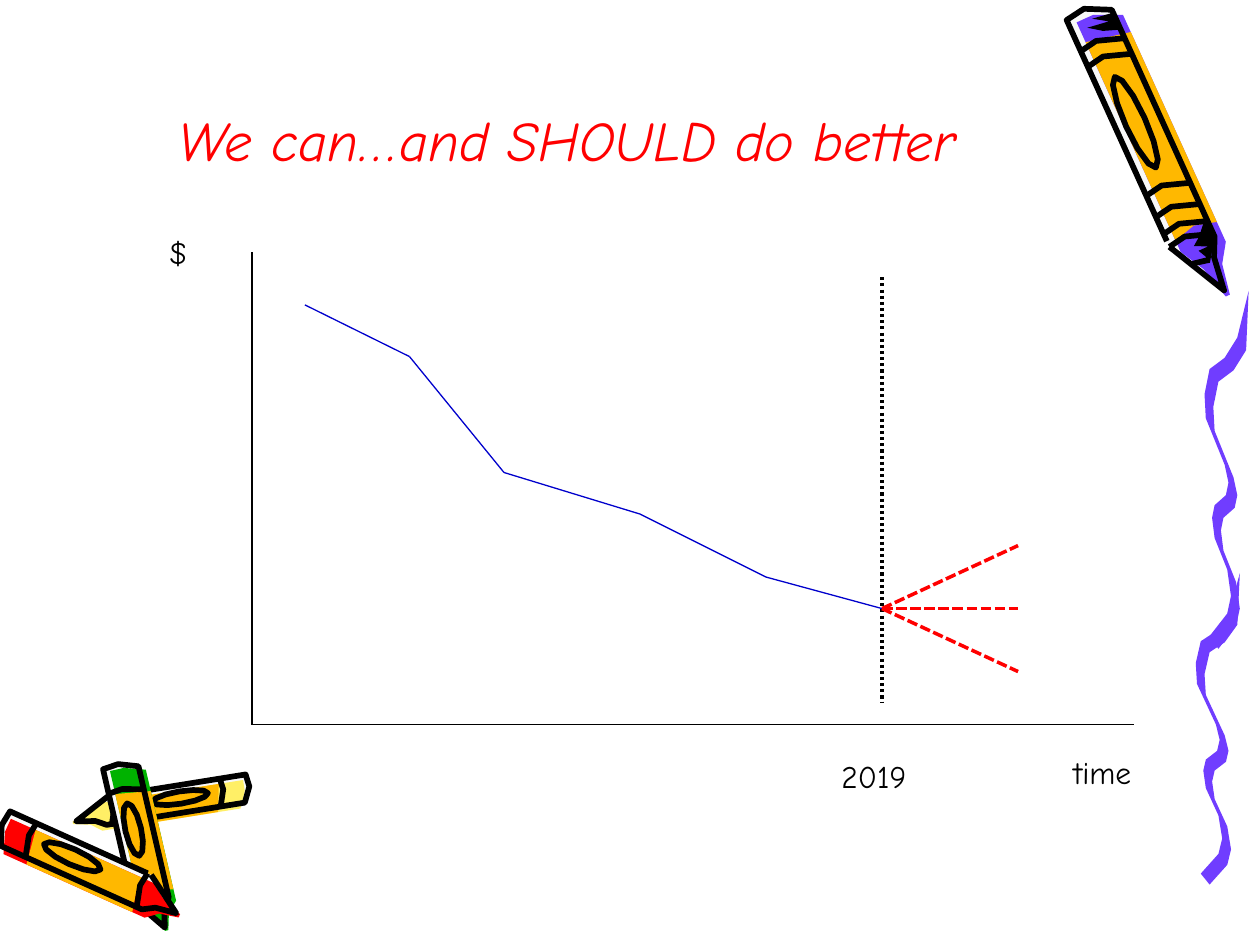
from dataclasses import dataclass
from itertools import pairwise
from math import cos, hypot, radians, sin

from lxml import etree
from pptx import Presentation
from pptx.dml.color import RGBColor
from pptx.enum.dml import MSO_LINE
from pptx.enum.shapes import MSO_CONNECTOR
from pptx.enum.text import MSO_ANCHOR, MSO_AUTO_SIZE, PP_ALIGN
from pptx.oxml.ns import qn
from pptx.util import Inches, Pt

STRAIGHT = MSO_CONNECTOR.STRAIGHT
DOTTED, DASHED = MSO_LINE.ROUND_DOT, MSO_LINE.SQUARE_DOT
LEFT, CENTER = PP_ALIGN.LEFT, PP_ALIGN.CENTER
BOTTOM = MSO_ANCHOR.BOTTOM
FIT_SHAPE, NO_FIT = MSO_AUTO_SIZE.SHAPE_TO_FIT_TEXT, MSO_AUTO_SIZE.NONE


@dataclass(frozen=True)
class Theme:
    font: str = "Comic Neue"
    title_size: int = 32
    label_size: int = 18
    ink_width: float = 3.25
    black: str = "000000"
    red: str = "FF0000"
    blue: str = "0000CC"
    purple: str = "703DFF"
    orange: str = "FFB800"
    yellow: str = "FFEF66"
    green: str = "00B200"
    pale: str = "F8F8F8"


THEME = Theme()


@dataclass(frozen=True)
class Crayon:
    """Axis ends in inches; a negative half_width mirrors the crayon."""
    blunt: tuple
    tip: tuple
    half_width: float
    wax: str
    wrapper_start: float = 0.14
    bands: tuple = (0.13, 0.76)
    shaded: bool = False

    def place(self, points):
        """Turn (along, across) into inches: along is 0 to 1, across is -1 to 1."""
        dx, dy = self.tip[0] - self.blunt[0], self.tip[1] - self.blunt[1]
        side = self.half_width / hypot(dx, dy)
        return [(self.blunt[0] + along * dx + across * side * dy,
                 self.blunt[1] + along * dy - across * side * dx)
                for along, across in points]


SMALL_CRAYONS = [
    Crayon((1.94, 6.26), (0.57, 6.48), 0.11, THEME.yellow),
    Crayon((0.96, 6.1), (1.26, 7.4), 0.14, THEME.green),
    Crayon((0.05, 6.58), (1.45, 7.21), -0.14, THEME.red),
]
BIG_CRAYON = Crayon((8.65, 0.13), (9.67, 2.38), 0.18, THEME.purple, wrapper_start=0.07,
                    bands=(0.09, 0.145, 0.6, 0.675, 0.735, 0.78), shaded=True)

# Parts of every crayon as (along, across). Colour sits a third of a half width off the ink.
OFFSET = 0.36
BARREL = [(0.76, -1), (-0.02, -1), (-0.03, -0.1), (0.01, 1), (0.81, 1)]
CONE = [(0.87, 0.6), (0.98, 0.4), (0.78, -1)]
WAX = [(0, -1), (0.81, -1), (0.89, -0.4), (1, 0), (1, 0.2), (0.9, 0.45), (0.84, 1), (0.04, 1), (0, -0.2)]
BAND = [(0, -1), (-0.01, -0.2), (0.02, 1)]
CAP_SHADE = [(0.06, 0.26), (0.08, 1), (0.02, 1), (0.01, 0.05), (0.04, 0.67), (0.03, -0.31)]
NECK_SHADE = [(0.74, 1), (0.79, 0.37), (0.81, 0), (0.83, 0.56), (0.83, 0.1), (0.86, 0.3),
              (0.85, -0.44), (0.87, -0.28), (0.88, 0.34), (0.81, 1)]
RING = [(0.37 + 0.16 * cos(radians(angle)), -0.1 + 0.45 * sin(radians(angle)))
        for angle in range(0, 360, 30)]

# Upper left edge of the wax trail; its other edge is the same one, moved by the thickness.
TRAIL_EDGE = [(0.35, 0), (0.26, 0.37), (0.16, 0.53), (0.04, 0.62), (0, 0.82), (0.01, 1.01),
              (0.16, 1.38), (0.19, 1.52), (0.17, 1.62), (0.08, 1.7), (0.06, 1.8), (0.08, 1.96),
              (0.18, 2.21), (0.21, 2.42), (0.18, 2.56), (0.04, 2.74)]
TRAIL_THICKNESS = (0.07, 0.1)

COST_HISTORY = [(2.42, 2.42), (3.25, 2.83), (4, 3.75), (5.08, 4.08), (6.08, 4.58), (7, 4.83)]


def add_outline(shapes, points, closed):
    start, *rest = [(Inches(x), Inches(y)) for x, y in points]
    builder = shapes.build_freeform(*start)
    builder.add_line_segments(rest, close=closed)
    outline = builder.convert_to_shape()
    outline.shadow.inherit = False
    return outline


def add_patch(shapes, points, colour):
    patch = add_outline(shapes, points, closed=True)
    patch.fill.solid()
    patch.fill.fore_color.rgb = RGBColor.from_string(colour)
    patch.line.fill.background()


def add_ink(shapes, points, closed=False):
    stroke = add_outline(shapes, points, closed)
    stroke.fill.background()
    stroke.line.color.rgb = RGBColor.from_string(THEME.black)
    stroke.line.width = Pt(THEME.ink_width)


def add_crayon(slide, crayon):
    """Lay the colours down first, then ink the contour, bands, ring and shading."""
    shapes = slide.shapes.add_group_shape().shapes
    wax = [(along, across + OFFSET) for along, across in WAX]
    near, far = OFFSET - 1, OFFSET + 1
    start = crayon.wrapper_start
    wrapper = [(start, near), (0.77, near), (0.75, OFFSET), (0.77, far), (start + 0.03, far)]
    fills = [(BARREL + CONE, THEME.pale), (wax, crayon.wax), (wrapper, THEME.orange)]
    if crayon.shaded:
        fills += [(CAP_SHADE, THEME.black), (NECK_SHADE, THEME.black)]
    for part, colour in fills:
        add_patch(shapes, crayon.place(part), colour)
    add_ink(shapes, crayon.place(BARREL + CONE))
    for position in crayon.bands:
        band = [(position + along, across) for along, across in BAND]
        add_ink(shapes, crayon.place(band))
    add_ink(shapes, crayon.place(RING), closed=True)


def add_trail(shapes, left, top, stretch=1.0):
    right, down = TRAIL_THICKNESS
    far_edge = [(x + right, y + down) for x, y in TRAIL_EDGE[1:]]
    ribbon = TRAIL_EDGE + far_edge[::-1]
    add_patch(shapes, [(left + x, top + y * stretch) for x, y in ribbon], THEME.purple)


def add_line(shapes, start, end, colour, width=0.75, dash=None):
    line = shapes.add_connector(STRAIGHT, *map(Inches, (*start, *end)))
    line.line.color.rgb = RGBColor.from_string(colour)
    line.line.width = Pt(width)
    if dash is not None:
        line.line.dash_style = dash
    etree.SubElement(line._element.spPr, qn("a:effectLst"))


def style_paragraph(paragraph, size, colour, align=LEFT, italic=False):
    paragraph.alignment = align
    font = paragraph.font
    font.name, font.size, font.italic = THEME.font, Pt(size), italic
    font.color.rgb = RGBColor.from_string(colour)


def add_title(slide, text):
    title = slide.shapes.title
    title.left, title.top, title.width, title.height = map(Inches, (0.75, 0.67, 7.51, 0.75))
    frame = title.text_frame
    frame.text = text
    frame.auto_size, frame.vertical_anchor = NO_FIT, BOTTOM
    style_paragraph(frame.paragraphs[0], THEME.title_size, THEME.red, CENTER, italic=True)


def add_label(slide, text, left, top, align=LEFT):
    frame = slide.shapes.add_textbox(*map(Inches, (left, top, 0.83, 0.4))).text_frame
    frame.text = text
    frame.word_wrap, frame.auto_size = True, FIT_SHAPE
    style_paragraph(frame.paragraphs[0], THEME.label_size, THEME.black, align)


def add_cost_graph(slide):
    shapes = slide.shapes
    origin, today = (2, 5.75), COST_HISTORY[-1]
    for axis_end in ((2, 2), (9, 5.75)):
        add_line(shapes, origin, axis_end, THEME.black)
    history = shapes.add_group_shape().shapes
    for start, end in pairwise(COST_HISTORY):
        add_line(history, start, end, THEME.blue)
    add_line(shapes, (today[0], 2.2), (today[0], 5.58), THEME.black, 1.75, DOTTED)
    for change in (0.5, 0, -0.5):
        add_line(shapes, today, (8.08, today[1] + change), THEME.red, 2, DASHED)
    add_label(slide, "$", 1, 1.8, CENTER)
    add_label(slide, "2019", 6.58, 5.96)
    add_label(slide, "time", 8.42, 5.93)


def main():
    deck = Presentation()
    deck.slide_width, deck.slide_height = Inches(10), Inches(7.5)
    slide = deck.slides.add_slide(deck.slide_layouts[5])
    for crayon in SMALL_CRAYONS:
        add_crayon(slide, crayon)
    trail = slide.shapes.add_group_shape().shapes
    add_trail(trail, 9.49, 4.55, stretch=0.87)
    add_trail(trail, 9.56, 2.31)
    add_crayon(slide, BIG_CRAYON)
    add_title(slide, "We can…and SHOULD do better")
    add_cost_graph(slide)
    deck.save("out.pptx")


if __name__ == "__main__":
    main()
